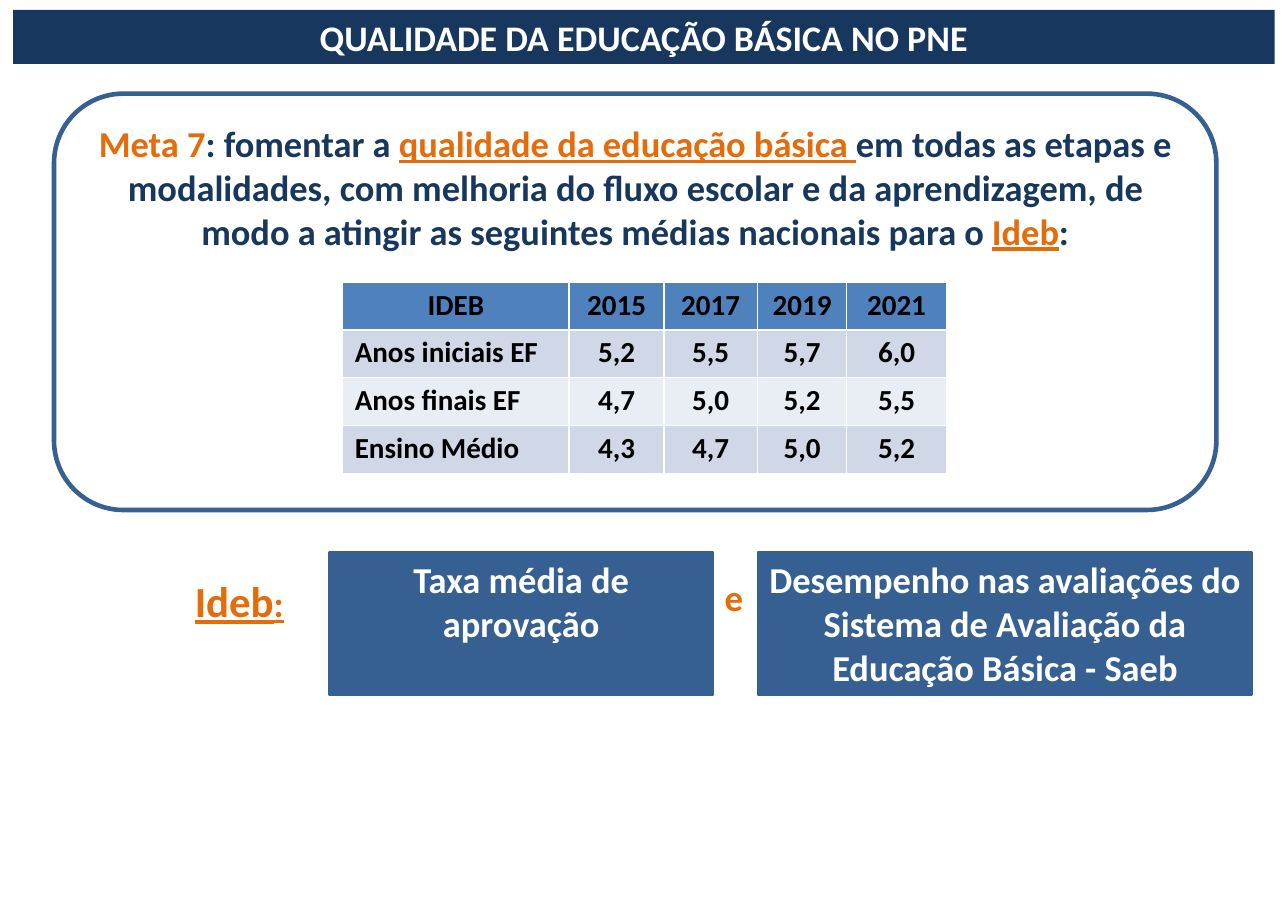
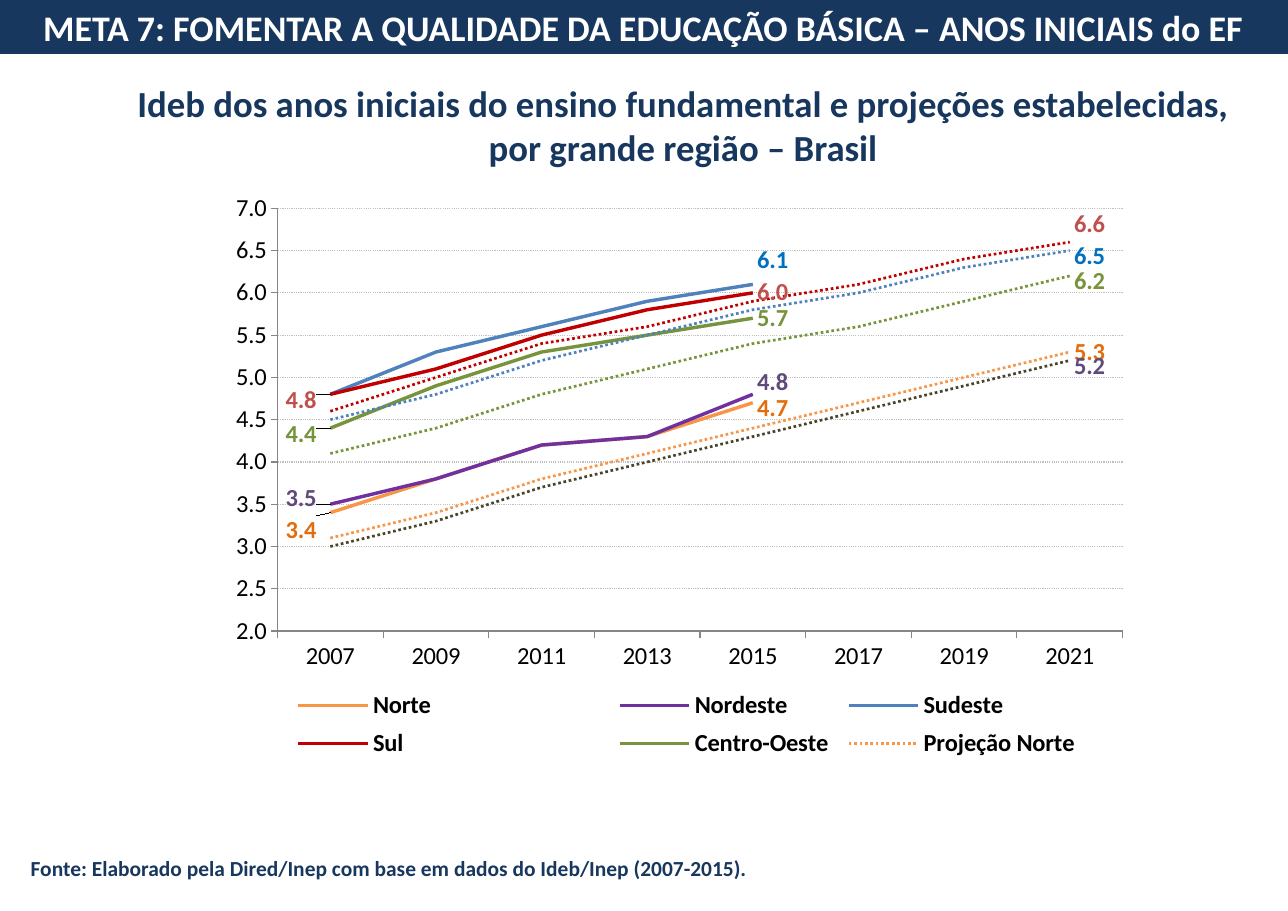
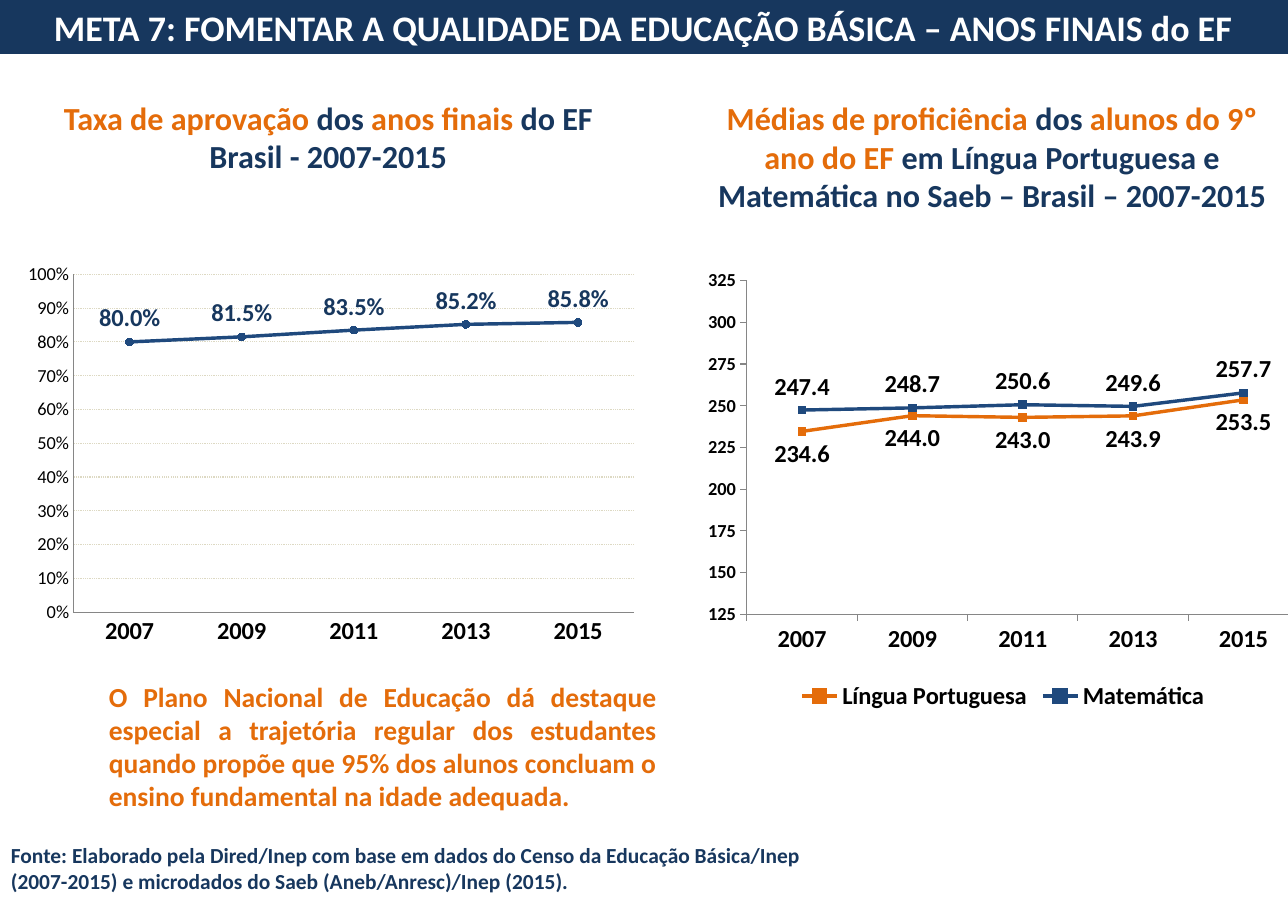
import pptx
import pptx.chart.data
import pptx.dml.color
import pptx.enum.chart
import pptx.enum.dml
import pptx.enum.shapes
import pptx.enum.text
import pptx.oxml
import pptx.oxml.ns
import pptx.util

Pt = pptx.util.Pt
RGB = pptx.dml.color.RGBColor
ALIGN = pptx.enum.text.PP_ALIGN
ANCHOR = pptx.enum.text.MSO_ANCHOR
SHAPE = pptx.enum.shapes.MSO_SHAPE
CHART = pptx.enum.chart.XL_CHART_TYPE
LABEL = pptx.enum.chart.XL_LABEL_POSITION
TICK = pptx.enum.chart.XL_TICK_MARK
MARKER = pptx.enum.chart.XL_MARKER_STYLE
DOTTED = pptx.enum.dml.MSO_LINE.ROUND_DOT
qn = pptx.oxml.ns.qn

FONT = "Calibri"
WHITE = RGB(0xFF, 0xFF, 0xFF)
BLACK = RGB(0, 0, 0)
NAVY = RGB(0x17, 0x37, 0x5E)
STEEL = RGB(0x37, 0x60, 0x92)
ORANGE = RGB(0xE4, 0x6C, 0x0A)
DARK_BLUE = RGB(0x1F, 0x49, 0x7D)
BLUE = RGB(0x4F, 0x81, 0xBD)
BRIGHT_BLUE = RGB(0x00, 0x70, 0xC0)
LIGHT_ORANGE = RGB(0xF7, 0x96, 0x46)
PURPLE = RGB(0x70, 0x30, 0xA0)
DULL_PURPLE = RGB(0x60, 0x4A, 0x7B)
RED = RGB(0xC0, 0x00, 0x00)
SOFT_RED = RGB(0xC0, 0x50, 0x4D)
GREEN = RGB(0x77, 0x93, 0x3C)
BROWN = RGB(0x4A, 0x45, 0x2A)
BAND_DARK = RGB(0xD0, 0xD8, 0xE8)
BAND_LIGHT = RGB(0xE9, 0xED, 0xF4)
GRID_GREY = RGB(0xBF, 0xBF, 0xBF)
GRID_BEIGE = RGB(0xDD, 0xD9, 0xC3)
AXIS_GREY = RGB(0x86, 0x86, 0x86)

SLIDE_W, SLIDE_H = 841.68, 595.44
BAND_H = 35.28
YEARS = ["2007", "2009", "2011", "2013", "2015", "2017", "2019", "2021"]


def pts(*values):
    return [Pt(v) for v in values]


def set_font(font, size, color, bold=True):
    font.name = FONT
    font.size = Pt(size)
    font.bold = bold
    font.color.rgb = color


def write(sp, runs, size, color, align=ALIGN.LEFT, insets=(7.2, 3.6)):
    """Fill a shape with one paragraph; runs are texts or (text, font overrides)."""
    tf = sp.text_frame
    tf.word_wrap = True
    tf.vertical_anchor = ANCHOR.TOP
    tf.margin_left = tf.margin_right = Pt(insets[0])
    tf.margin_top = tf.margin_bottom = Pt(insets[1])
    p = tf.paragraphs[0]
    p.alignment = align
    set_font(p.font, size, color)
    for run in runs:
        text, look = (run, {}) if isinstance(run, str) else run
        r = p.add_run()
        r.text = text
        if "color" in look:
            r.font.color.rgb = look["color"]
        if "size" in look:
            r.font.size = Pt(look["size"])
        if look.get("underline"):
            r.font.underline = True


def add_text(slide, box, runs, size, color, **options):
    write(slide.shapes.add_textbox(*pts(*box)), runs, size, color, **options)


def add_box(slide, box, runs, size, color, fill, line=None, line_width=1.5,
            kind=SHAPE.RECTANGLE, **options):
    sp = slide.shapes.add_shape(kind, *pts(*box))
    sp.shadow.inherit = False
    sp.fill.solid()
    sp.fill.fore_color.rgb = fill
    if line is None:
        sp.line.fill.background()
    else:
        sp.line.color.rgb = line
        sp.line.width = Pt(line_width)
    write(sp, runs, size, color, align=ALIGN.CENTER, **options)


def add_title_band(slide, text, box=(-1.44, 0, 843.84, BAND_H)):
    add_box(slide, box, [text], 23.5, WHITE, NAVY)


def add_source(slide, box, text):
    add_text(slide, box, [text], 14, NAVY)


def add_ideb_table(slide, box, widths, rows):
    frame = slide.shapes.add_table(len(rows), len(widths), *pts(*box))
    table = frame.table
    for column, width in zip(table.columns, widths):
        column.width = Pt(width)
    for i, row in enumerate(rows):
        table.rows[i].height = Pt(box[3] / len(rows))
        for j, text in enumerate(row):
            cell = table.cell(i, j)
            cell.margin_left = cell.margin_right = Pt(8)
            cell.fill.solid()
            cell.fill.fore_color.rgb = (
                BLUE if i == 0 else BAND_DARK if i % 2 else BAND_LIGHT)
            p = cell.text_frame.paragraphs[0]
            p.alignment = ALIGN.LEFT if i and j == 0 else ALIGN.CENTER
            set_font(p.font, 19, BLACK)
            p.add_run().text = text


def manual_layout(**values):
    """Build a c:layout element from its child names and values."""
    layout = pptx.oxml.parse_xml(
        f'<c:layout {pptx.oxml.ns.nsdecls("c")}><c:manualLayout/></c:layout>')
    for name, value in values.items():
        child = layout[0].makeelement(qn(f"c:{name}"), {"val": str(value)})
        layout[0].append(child)
    return layout


def place(element, index, x, y, w, h, **target):
    """Give a plot area or legend a fixed place, in fractions of the chart."""
    for old in element.findall(qn("c:layout")):
        element.remove(old)
    element.insert(index, manual_layout(
        **target, xMode="edge", yMode="edge", x=x, y=y, w=w, h=h))


def add_line_chart(slide, box, kind, years, series, number_format, plot=None):
    data = pptx.chart.data.CategoryChartData(number_format=number_format)
    data.categories = years
    for name, values in series:
        data.add_series(name, values)
    chart = slide.shapes.add_chart(kind, *pts(*box), data).chart
    chart.has_title = False
    chart.has_legend = False
    set_font(chart.font, 16, BLACK, bold=False)
    chart.plots[0].vary_by_categories = False
    if plot:
        area = chart.element.find(".//" + qn("c:plotArea"))
        place(area, 0, *plot, layoutTarget="inner")
    return chart


def style_axes(chart, low, high, step, number_format, tick=TICK.OUTSIDE,
               grid=None, value_size=16, value_bold=False, category_bold=False):
    categories, values = chart.category_axis, chart.value_axis
    for axis, size, bold in ((categories, 16, category_bold),
                             (values, value_size, value_bold)):
        axis.major_tick_mark = tick
        axis.minor_tick_mark = TICK.NONE
        axis.format.line.color.rgb = AXIS_GREY
        axis.format.line.width = Pt(0.75)
        set_font(axis.tick_labels.font, size, BLACK, bold)
    values.minimum_scale, values.maximum_scale = low, high
    values.major_unit = step
    values.tick_labels.number_format = number_format
    values.tick_labels.number_format_is_linked = False
    values.has_major_gridlines = grid is not None
    if grid is not None:
        line = values.major_gridlines.format.line
        line.color.rgb = grid
        line.width = Pt(0.75)
        line.dash_style = DOTTED


def style_line(ser, color, width=2.25, dotted=False):
    ser.smooth = False
    ser.format.line.color.rgb = color
    ser.format.line.width = Pt(width)
    if dotted:
        ser.format.line.dash_style = DOTTED


def style_markers(ser, style, color):
    ser.marker.style = style
    ser.marker.size = 5
    ser.marker.format.fill.solid()
    ser.marker.format.fill.fore_color.rgb = color
    ser.marker.format.line.color.rgb = color


def label_all(ser, position, number_format, color=BLACK):
    labels = ser.data_labels
    labels.show_value = True
    labels.position = position
    labels.number_format = number_format
    labels.number_format_is_linked = False
    set_font(labels.font, 16, color)


def label_point(ser, index, color, position, dx, dy):
    """Label one point; dx and dy shift it, in fractions of the chart."""
    ser.data_labels.show_value = False
    label = ser.points[index].data_label
    set_font(label.font, 16, color)
    label.position = position
    for item in ser.data_labels._element.findall(qn("c:dLbl")):
        if item.find(qn("c:idx")).get("val") == str(index):
            item.insert(1, manual_layout(x=dx, y=dy))


def add_legend(chart, box=None):
    chart.has_legend = True
    chart.legend.position = pptx.enum.chart.XL_LEGEND_POSITION.BOTTOM
    chart.legend.include_in_layout = False
    set_font(chart.legend.font, 16, BLACK)
    if box:
        place(chart.element.find(".//" + qn("c:legend")), 1, *box)


def build_goal(slide):
    add_title_band(slide, "QUALIDADE DA EDUCAÇÃO BÁSICA NO PNE",
                   (8.64, 6.48, 824.4, BAND_H))
    marked = {"color": ORANGE, "underline": True}
    add_box(slide, (35.28, 61.2, 759.6, 272.16), [
        ("Meta 7", {"color": ORANGE}), ": fomentar a ",
        ("qualidade da educação básica ", marked),
        "em todas as etapas e modalidades, com melhoria do fluxo escolar e da "
        "aprendizagem, de modo a atingir as seguintes médias nacionais para o ",
        ("Ideb", marked), ":",
    ], 23.8, NAVY, WHITE, STEEL, 3, SHAPE.ROUNDED_RECTANGLE, insets=(12, 5))
    add_ideb_table(slide, (223.92, 184.4, 394.56, 125), (148, 62, 61, 58.5, 65), [
        ("IDEB", "2015", "2017", "2019", "2021"),
        ("Anos iniciais EF", "5,2", "5,5", "5,7", "6,0"),
        ("Anos finais EF", "4,7", "5,0", "5,2", "5,5"),
        ("Ensino Médio", "4,3", "4,7", "5,0", "5,2"),
    ])
    for left, width, text in (
            (215.28, 250.56, "Taxa média de aprovação"),
            (495.36, 322.56, "Desempenho nas avaliações do Sistema de "
                             "Avaliação da Educação Básica - Saeb")):
        add_box(slide, (left, 360.72, width, 93.6), [text], 23.8, WHITE, STEEL, STEEL)
    add_text(slide, (120.24, 372.24, 90.72, 41),
             [("Ideb", marked), (":", {"underline": True, "size": 24})], 28, ORANGE)
    add_text(slide, (466.56, 372.24, 28.8, 36), ["e"], 24, ORANGE)


def build_regions(slide):
    add_text(slide, (69.84, 48.96, 753.12, 66.24), [
        "Ideb dos anos iniciais do ensino fundamental e projeções "
        "estabelecidas, por grande região – Brasil"],
        24, NAVY, align=ALIGN.CENTER, insets=(8, 4))
    left, right = LABEL.LEFT, LABEL.RIGHT
    # name, values, line colour, label colour, labels (point, side, dx, dy)
    observed = [
        ("Norte", (3.4, 3.8, 4.2, 4.3, 4.7), LIGHT_ORANGE, ORANGE,
         [(0, left, -0.01, 0.03), (4, right, 0, 0.01)]),
        ("Nordeste", (3.5, 3.8, 4.2, 4.3, 4.8), PURPLE, DULL_PURPLE,
         [(0, left, -0.01, -0.01), (4, right, 0, -0.02)]),
        ("Sudeste", (4.8, 5.3, 5.6, 5.9, 6.1), BLUE, BRIGHT_BLUE,
         [(4, right, 0, -0.04)]),
        ("Sul", (4.8, 5.1, 5.5, 5.8, 6.0), RED, SOFT_RED,
         [(0, left, -0.01, 0.01), (4, right, 0, 0)]),
        ("Centro-Oeste", (4.4, 4.9, 5.3, 5.5, 5.7), GREEN, GREEN,
         [(0, left, -0.01, 0.01), (4, right, 0, 0)]),
    ]
    projected = [
        ("Projeção Norte", (3.1, 3.4, 3.8, 4.1, 4.4, 4.7, 5.0, 5.3),
         LIGHT_ORANGE, ORANGE, [(7, right, 0, 0)]),
        ("Projeção Nordeste", (3.0, 3.3, 3.7, 4.0, 4.3, 4.6, 4.9, 5.2),
         BROWN, DULL_PURPLE, [(7, right, 0, 0.01)]),
        ("Projeção Sul", (4.5, 4.8, 5.2, 5.5, 5.8, 6.0, 6.3, 6.5),
         BLUE, BRIGHT_BLUE, [(7, right, 0, 0.01)]),
        ("Projeção Sudeste", (4.6, 5.0, 5.4, 5.6, 5.9, 6.1, 6.4, 6.6),
         RED, SOFT_RED, [(7, right, 0, -0.03)]),
        ("Projeção Centro-Oeste", (4.1, 4.4, 4.8, 5.1, 5.4, 5.6, 5.9, 6.2),
         GREEN, GREEN, [(7, right, 0, 0.01)]),
    ]
    regions = observed + projected
    series = [(name, values + (None,) * (len(YEARS) - len(values)))
              for name, values, *_ in regions]
    chart = add_line_chart(slide, (137.52, 121.68, 617.76, 390.96), CHART.LINE,
                           YEARS, series, "0.0", (0.071, 0.037, 0.894, 0.707))
    style_axes(chart, 2, 7, 0.5, "#,##0.0", grid=GRID_GREY)
    for ser, (_, values, color, label_color, labels) in zip(
            chart.plots[0].series, regions):
        dotted = len(values) == len(YEARS)
        style_line(ser, color, 1.75 if dotted else 2.25, dotted)
        for index, side, dx, dy in labels:
            label_point(ser, index, label_color, side, dx, dy)
    add_legend(chart, (0.08, 0.83, 0.87, 0.14))
    add_source(slide, (12.96, 555.12, 493.2, 24.48),
               "Fonte: Elaborado pela Dired/Inep com base em dados do Ideb/Inep "
               "(2007-2015).")
    add_title_band(slide, "META 7: FOMENTAR A QUALIDADE DA EDUCAÇÃO BÁSICA – "
                          "ANOS INICIAIS do EF")


def build_final_years(slide):
    years = YEARS[:5]
    chart = add_line_chart(
        slide, (449.28, 174.96, 412.56, 293.04), CHART.LINE_MARKERS, years,
        [("Língua Portuguesa", (234.6, 244, 243, 243.9, 253.5)),
         ("Matemática", (247.4, 248.7, 250.6, 249.6, 257.7))],
        "0.0", (0.094, 0.029, 0.874, 0.744))
    style_axes(chart, 125, 325, 25, "0", value_size=12, value_bold=True,
               category_bold=True)
    for ser, color, position in zip(chart.plots[0].series, (ORANGE, DARK_BLUE),
                                    (LABEL.BELOW, LABEL.ABOVE)):
        style_line(ser, color)
        style_markers(ser, MARKER.SQUARE, color)
        label_all(ser, position, "0.0")
    add_legend(chart)

    orange = {"color": ORANGE}
    add_text(slide, (455.04, 60.48, 386.64, 84.24), [
        ("Médias de proficiência ", orange), "dos ",
        ("alunos do 9º ano do EF ", orange),
        "em Língua Portuguesa e Matemática no Saeb – Brasil – 2007-2015",
    ], 21, NAVY, align=ALIGN.CENTER, insets=(8, 4))
    add_text(slide, (33.12, 60.48, 362.88, 58.32), [
        ("Taxa de aprovação ", orange), "dos ", ("anos finais ", orange),
        "do EF Brasil - 2007-2015",
    ], 21, NAVY, align=ALIGN.CENTER)

    chart = add_line_chart(
        slide, (10.08, 167.04, 412.56, 260.64), CHART.LINE_MARKERS, years,
        [("Taxa de aprovação", (0.8, 0.815, 0.835, 0.852, 0.858))], "0.0%")
    style_axes(chart, 0, 1, 0.1, "0%", TICK.NONE, GRID_BEIGE, 12,
               category_bold=True)
    ser = chart.plots[0].series[0]
    style_line(ser, DARK_BLUE)
    style_markers(ser, MARKER.CIRCLE, DARK_BLUE)
    label_all(ser, LABEL.ABOVE, "0.0%", NAVY)

    add_source(slide, (0, 547.2, 550.8, 41.04),
               "Fonte: Elaborado pela Dired/Inep com base em dados do Censo da "
               "Educação Básica/Inep (2007-2015) e microdados do Saeb "
               "(Aneb/Anresc)/Inep (2015).")
    add_title_band(slide, "META 7: FOMENTAR A QUALIDADE DA EDUCAÇÃO BÁSICA – "
                          "ANOS FINAIS do EF")
    add_text(slide, (64.08, 440.64, 372.24, 94.32), [
        "O Plano Nacional de Educação dá destaque especial a trajetória regular "
        "dos estudantes quando propõe que 95% dos alunos concluam o ensino "
        "fundamental na idade adequada."], 18, ORANGE, align=ALIGN.JUSTIFY)


def main():
    prs = pptx.Presentation()
    prs.slide_width, prs.slide_height = pts(SLIDE_W, SLIDE_H)
    for build in (build_goal, build_regions, build_final_years):
        build(prs.slides.add_slide(prs.slide_layouts[6]))
    prs.save("out.pptx")


if __name__ == "__main__":
    main()
